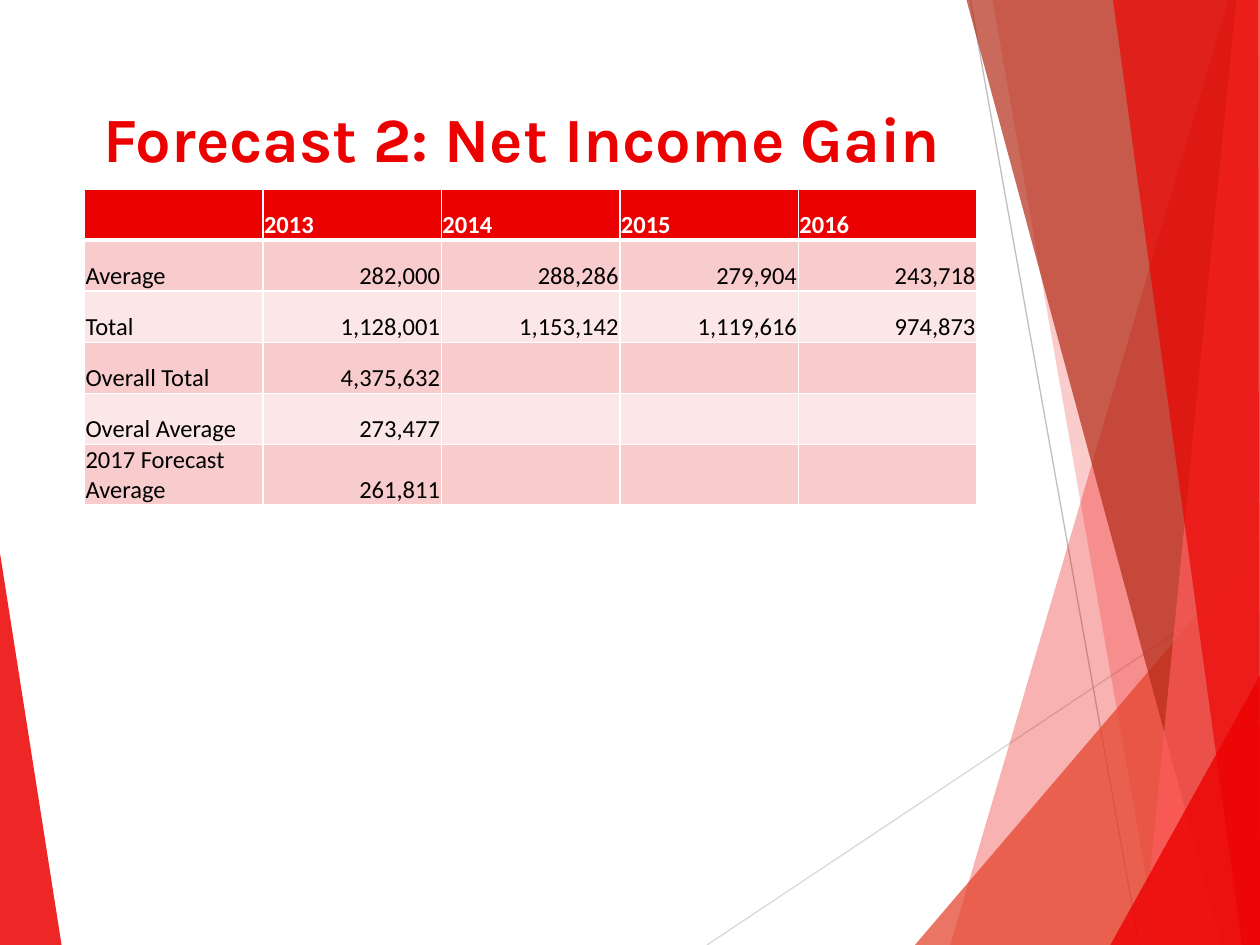
import pptx
import pptx.util
import pptx.dml.color
import pptx.enum.text
import pptx.enum.shapes
import pptx.oxml
import pptx.oxml.ns
from lxml import etree

Pt = pptx.util.Pt
qn = pptx.oxml.ns.qn
ALIGN = pptx.enum.text.PP_ALIGN
ANCHOR = pptx.enum.text.MSO_ANCHOR

RED, WHITE, BLACK = "EC0101", "FFFFFF", "000000"
BANDS = ["F8CCCC", "FBE7E7"]
TITLE = "Forecast 2: Net Income Gain"
ROWS = [
    ["", "2013", "2014", "2015", "2016"],
    ["Average", "282,000", "288,286", "279,904", "243,718"],
    ["Total", "1,128,001", "1,153,142", "1,119,616", "974,873"],
    ["Overall Total", "4,375,632", "", "", ""],
    ["Overal Average", "273,477", "", "", ""],
    ["2017 Forecast Average", "261,811", "", "", ""],
]
LEFT_SHARD = (RED, 85, [(0, 316), (35.2, 540), (0, 540)])
RAYS = [
    ("D9D9D9", (404, 540), (720, 329.5)),
    ("BFBFBF", (554.5, 0), (651, 540)),
]
RIGHT_SHARDS = [
    (RED, 30, [(702, 0), (543, 540), (720, 540), (720, 0)]),
    (RED, 20, [(567.2, 0), (661.8, 540), (720, 540), (720, 0)]),
    ("E44129", 72, [(522.8, 540), (720, 309), (720, 540)]),
    ("B32B17", 70, [(552.3, 0), (698.2, 540), (720, 540), (720, 0)]),
    ("FE5C5C", 70, [(706.4, 0), (653.2, 540), (720, 540), (720, 0)]),
    (RED, 65, [(636, 0), (709.8, 540), (720, 540), (718.8, 0)]),
    (RED, 80, [(634.5, 540), (720, 386), (720, 540)]),
]
TABLE_LEFT, TABLE_TOP, COLUMN_WIDTH, ROW_HEIGHT = 48.2, 108, 102, 29.2


def color(value):
    return pptx.dml.color.RGBColor.from_string(value)


def add_shard(slide, fill, opacity, points):
    builder = slide.shapes.build_freeform(Pt(points[0][0]), Pt(points[0][1]), scale=1.0)
    builder.add_line_segments([(Pt(x), Pt(y)) for x, y in points[1:]], close=True)
    shape = builder.convert_to_shape()
    shape.shadow.inherit = False
    shape.line.fill.background()
    shape.fill.solid()
    shape.fill.fore_color.rgb = color(fill)
    fill_color = shape._element.spPr.find(qn("a:solidFill"))[0]
    etree.SubElement(fill_color, qn("a:alpha"), val=str(opacity * 1000))


def add_ray(slide, stroke, start, end):
    connector = slide.shapes.add_connector(
        pptx.enum.shapes.MSO_CONNECTOR.STRAIGHT, *[Pt(value) for value in start + end])
    connector.line.color.rgb = color(stroke)
    connector.line.width = Pt(0.75)
    etree.SubElement(connector._element.spPr, qn("a:effectLst"))


def style_run(run, font, size, fill, bold):
    run.font.name = font
    run.font.size = Pt(size)
    run.font.bold = bold
    run.font.color.rgb = color(fill)


def add_title(slide):
    box = slide.shapes.add_textbox(Pt(48.2), Pt(48.2), Pt(500), Pt(60))
    frame = box.text_frame
    frame.word_wrap = True
    frame.vertical_anchor = ANCHOR.MIDDLE
    frame.text = TITLE
    frame.paragraphs[0].alignment = ALIGN.CENTER
    style_run(frame.paragraphs[0].runs[0], "Karla", 36, RED, True)


def set_borders(cell, widths):
    properties = cell._tc.get_or_add_tcPr()
    for index, (side, width) in enumerate(widths.items()):
        line = etree.Element(qn("a:" + side), w=str(Pt(width)))
        fill = etree.SubElement(line, qn("a:solidFill"))
        etree.SubElement(fill, qn("a:srgbClr"), val=WHITE)
        properties.insert(index, line)


def style_cell(cell, text, row, column):
    header = row == 0
    cell.fill.solid()
    cell.fill.fore_color.rgb = color(RED if header else BANDS[(row - 1) % 2])
    set_borders(cell, {"lnL": 1, "lnR": 1, "lnT": 3 if row == 1 else 1, "lnB": 3 if header else 1})
    cell.vertical_anchor = ANCHOR.BOTTOM
    cell.margin_left = cell.margin_right = cell.margin_top = Pt(0.7)
    cell.margin_bottom = 0
    cell.text = text
    paragraph = cell.text_frame.paragraphs[0]
    paragraph.font.size = Pt(14)
    paragraph.alignment = ALIGN.LEFT if header or column == 0 else ALIGN.RIGHT
    for run in paragraph.runs:
        style_run(run, "Calibri", 14, WHITE if header else BLACK, header)


def add_income_table(slide):
    row_count, column_count = len(ROWS), len(ROWS[0])
    table = slide.shapes.add_table(
        row_count, column_count, Pt(TABLE_LEFT), Pt(TABLE_TOP),
        Pt(COLUMN_WIDTH * column_count), Pt(ROW_HEIGHT * row_count)).table
    for table_row in table.rows:
        table_row.height = Pt(ROW_HEIGHT)
    for row, texts in enumerate(ROWS):
        for column, text in enumerate(texts):
            style_cell(table.cell(row, column), text, row, column)


def main():
    presentation = pptx.Presentation()
    presentation.slide_width, presentation.slide_height = Pt(720), Pt(540)
    slide = presentation.slides.add_slide(presentation.slide_layouts[6])
    add_shard(slide, *LEFT_SHARD)
    for ray in RAYS:
        add_ray(slide, *ray)
    for shard in RIGHT_SHARDS:
        add_shard(slide, *shard)
    add_title(slide)
    add_income_table(slide)
    presentation.save("out.pptx")


if __name__ == "__main__":
    main()
